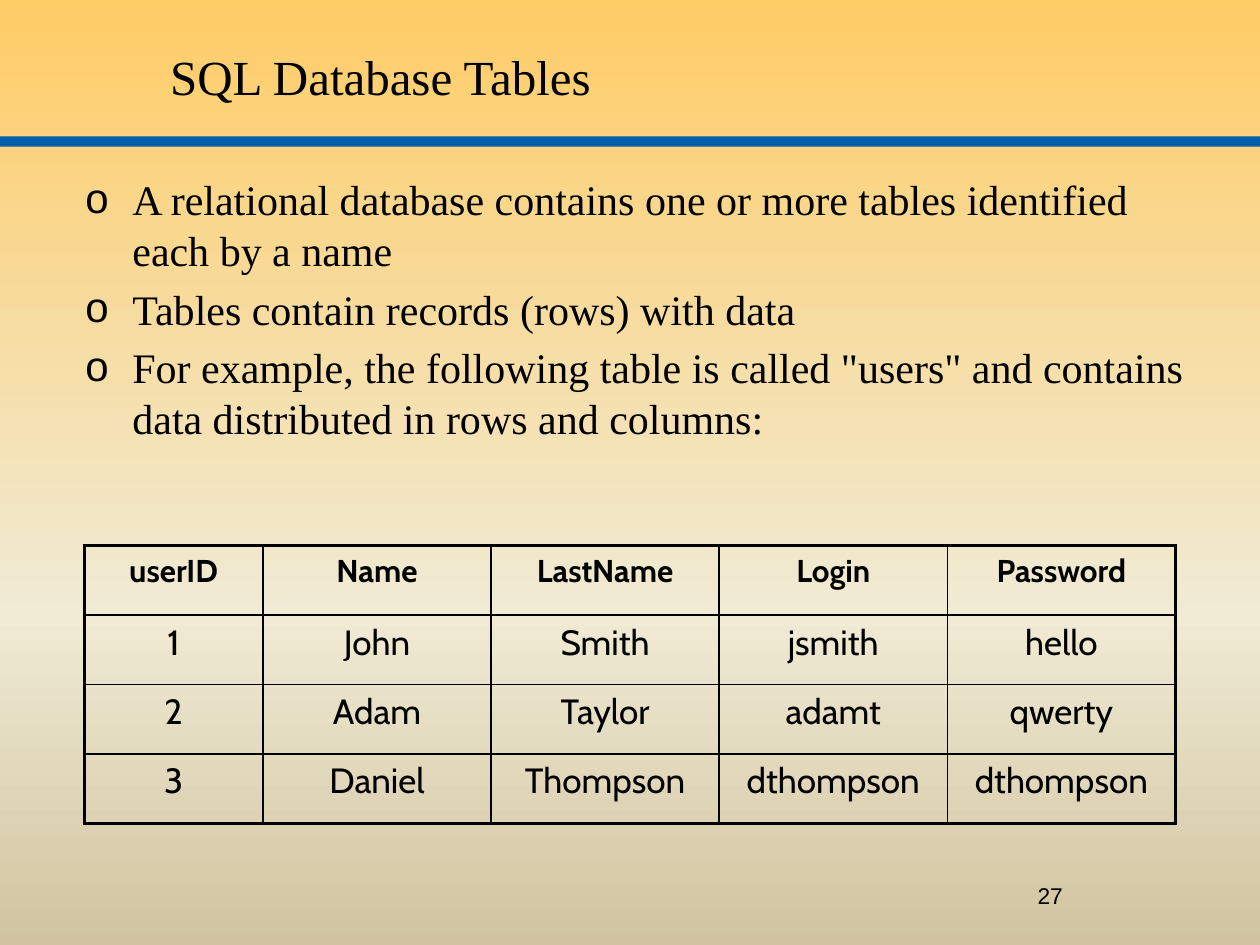
from copy import deepcopy

from lxml import etree
from pptx import Presentation
from pptx import util as u
from pptx.dml.color import RGBColor
from pptx.enum import shapes, text
from pptx.oxml.ns import qn

COLORS = {"ink": "000000", "bar": "005DAA", "top": "FFCC66",
          "middle": "F0EBD5", "bottom": "D1C39F"}
SERIF, SANS, TABLE_FONT = "Times New Roman", "Arial", "Cabin"
THICK, THIN = 2.25, 1

BULLETS = [
    "A relational database contains one or more tables identified each by a name",
    "Tables contain records (rows) with data",
    'For example, the following table is called "users" and contains '
    "data distributed in rows and columns:",
]
USERS = [
    ["userID", "Name", "LastName", "Login", "Password"],
    ["1", "John", "Smith", "jsmith", "hello"],
    ["2", "Adam", "Taylor", "adamt", "qwerty"],
    ["3", "Daniel", "Thompson", "dthompson", "dthompson"],
]


def rgb(name):
    return RGBColor.from_string(COLORS[name])


class SlideBuilder:
    def __init__(self, slide):
        self.slide = slide

    def background(self, stops):
        fill = self.slide.background.fill
        fill.gradient()
        fill.gradient_angle = 270
        stop_list = self.slide.element.find(".//" + qn("a:gsLst"))
        while len(stop_list) < len(stops):
            stop_list.append(deepcopy(stop_list[0]))
        for stop, (position, color) in zip(fill.gradient_stops, stops):
            stop.position = position
            stop.color.rgb = rgb(color)

    def bar(self, left, top, width, height):
        bar = self.slide.shapes.add_shape(
            shapes.MSO_SHAPE.RECTANGLE,
            u.Cm(left), u.Cm(top), u.Cm(width), u.Cm(height))
        bar.shadow.inherit = False
        bar.fill.solid()
        bar.fill.fore_color.rgb = rgb("bar")
        bar.line.fill.background()

    def style(self, para, font, size, bold=False):
        for span in para.runs:
            span.font.name = font
            span.font.size = u.Pt(size)
            span.font.bold = bold
            span.font.color.rgb = rgb("ink")

    def text(self, content, left, top, width, height, font, size,
             anchor=text.MSO_ANCHOR.TOP, align=text.PP_ALIGN.LEFT):
        box = self.slide.shapes.add_textbox(
            u.Cm(left), u.Cm(top), u.Cm(width), u.Cm(height))
        frame = box.text_frame
        frame.word_wrap = True
        frame.vertical_anchor = anchor
        frame.text = content
        for para in frame.paragraphs:
            para.alignment = align
            self.style(para, font, size)
        return frame

    def bullets(self, items, *place, font, size):
        frame = self.text("\n".join(items), *place, font, size)
        for para in frame.paragraphs:
            para.space_before = u.Pt(0.2 * size)
            props = para._p.get_or_add_pPr()
            props.set("marL", str(u.Cm(0.95)))
            props.set("indent", str(u.Cm(-0.95)))
            etree.SubElement(props, qn("a:buFont"), typeface=SANS)
            etree.SubElement(props, qn("a:buChar"), char="o")

    def borders(self, cell, widths):
        props = cell._tc.get_or_add_tcPr()
        for index, (side, width) in enumerate(zip("LRTB", widths)):
            line = etree.Element(qn("a:ln" + side), w=str(u.Pt(width)))
            fill = etree.SubElement(line, qn("a:solidFill"))
            etree.SubElement(fill, qn("a:srgbClr"), val=COLORS["ink"])
            props.insert(index, line)

    def table(self, rows, left, top, col_widths, row_height):
        last_row, last_col = len(rows) - 1, len(col_widths) - 1
        table = self.slide.shapes.add_table(
            len(rows), len(col_widths), u.Cm(left), u.Cm(top),
            u.Cm(sum(col_widths)), u.Cm(row_height * len(rows))).table
        table.first_row = table.horz_banding = False
        for column, width in zip(table.columns, col_widths):
            column.width = u.Cm(width)
        for r, values in enumerate(rows):
            table.rows[r].height = u.Cm(row_height)
            size = 20 if r else 18
            for c, value in enumerate(values):
                cell = table.cell(r, c)
                cell.fill.background()
                para = cell.text_frame.paragraphs[0]
                para.text = value
                para.alignment = text.PP_ALIGN.CENTER
                para.space_before = u.Pt(0.2 * size)
                self.style(para, TABLE_FONT, size, bold=r == 0)
                outer = (c == 0, c == last_col, r == 0, r == last_row)
                self.borders(cell, [THICK if edge else THIN for edge in outer])


def main():
    deck = Presentation()
    deck.slide_width, deck.slide_height = u.Cm(25.4), u.Cm(19.05)
    page = SlideBuilder(deck.slides.add_slide(deck.slide_layouts[6]))

    # Backdrop and header
    page.background([(0, "top"), (0.65, "middle"), (1, "bottom")])
    page.bar(0, 2.75, 25.4, 0.21)
    page.text("SQL Database Tables", 3.18, 0.43, 19.25, 2.21, SERIF, 28,
              anchor=text.MSO_ANCHOR.MIDDLE)

    # Explanation and example table
    page.bullets(BULLETS, 1.47, 3.38, 22.86, 6.99, font=SERIF, size=24)
    page.table(USERS, 1.7, 11, [3.6] + [4.6] * 4, 1.4)

    # Page number
    page.text("27", 18.21, 17.65, 5.92, 1.02, SANS, 13,
              align=text.PP_ALIGN.CENTER)
    deck.save("out.pptx")


if __name__ == "__main__":
    main()
